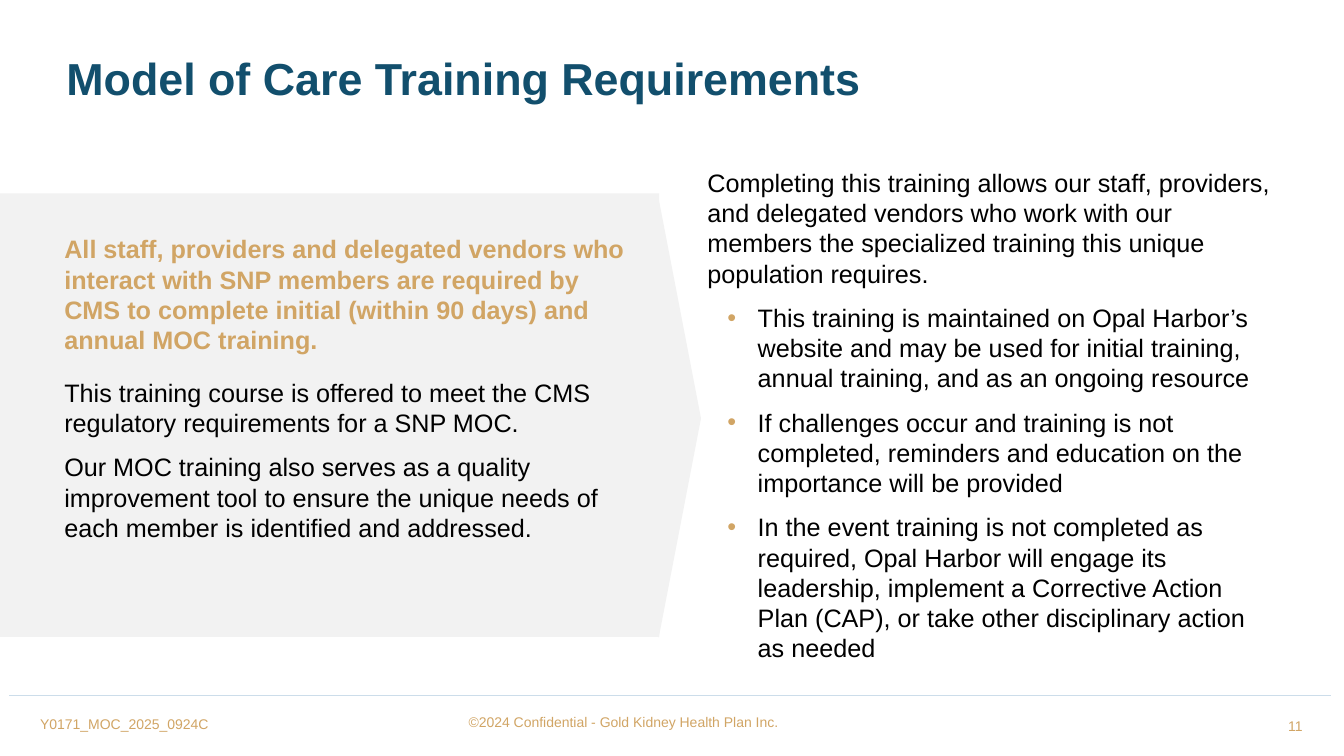
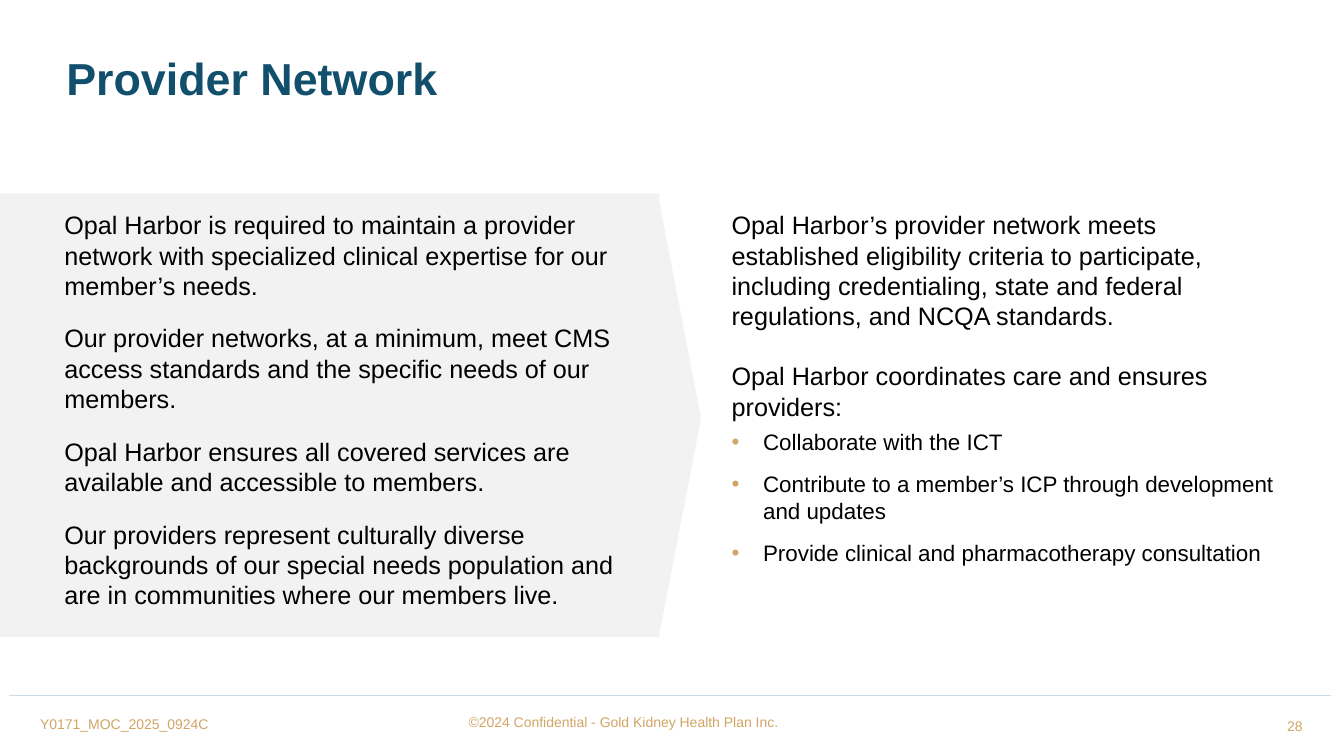
from lxml import etree
from pptx import Presentation
from pptx.dml.color import RGBColor
from pptx.enum.shapes import MSO_CONNECTOR, MSO_SHAPE
from pptx.enum.text import MSO_ANCHOR, PP_ALIGN
from pptx.oxml.ns import qn
from pptx.util import Pt

TEAL = RGBColor(0x12, 0x4F, 0x6D)
GOLD = RGBColor(0xD1, 0xA5, 0x65)
BLACK = RGBColor(0x00, 0x00, 0x00)
PANEL_GRAY = RGBColor(0xF2, 0xF2, 0xF2)
RULE_BLUE = RGBColor(0xCC, 0xDD, 0xEA)

RECTANGLE = MSO_SHAPE.RECTANGLE
TRIANGLE = MSO_SHAPE.ISOSCELES_TRIANGLE
STRAIGHT = MSO_CONNECTOR.STRAIGHT
TOP, MIDDLE = MSO_ANCHOR.TOP, MSO_ANCHOR.MIDDLE
LEFT, RIGHT = PP_ALIGN.LEFT, PP_ALIGN.RIGHT
FONT = "Arial"


def add_bullet(paragraph, margin, hanging):
    properties = paragraph._p.get_or_add_pPr()
    properties.set("marL", str(Pt(margin)))
    properties.set("indent", str(-Pt(hanging)))
    color = etree.SubElement(properties, qn("a:buClr"))
    etree.SubElement(color, qn("a:srgbClr"), val=str(GOLD))
    etree.SubElement(properties, qn("a:buFont"), typeface=FONT)
    etree.SubElement(properties, qn("a:buChar"), char="•")


def add_text(slide, box, paragraphs, anchor=TOP, **box_format):
    """Each paragraph is (text, format); its format overrides box_format."""
    frame = slide.shapes.add_textbox(*map(Pt, box)).text_frame
    frame.word_wrap = True
    frame.vertical_anchor = anchor
    for index, (text, own_format) in enumerate(paragraphs):
        style = {**box_format, **own_format}
        paragraph = frame.add_paragraph() if index else frame.paragraphs[0]
        paragraph.level = style.get("level", 0)
        if "bullet" in style:
            add_bullet(paragraph, *style["bullet"])
        paragraph.alignment = style.get("align", LEFT)
        paragraph.line_spacing = style.get("line_spacing", 1.0)
        paragraph.space_before = Pt(style.get("before", 0) if index else 0)
        paragraph.space_after = Pt(style.get("after", 0))
        run = paragraph.add_run()
        run.text = text
        run.font.name = FONT
        run.font.size = Pt(style.get("size", 18))
        run.font.bold = style.get("bold", False)
        run.font.color.rgb = style.get("color", BLACK)


# Paragraph formats
PLAIN = {}
SPACED = {"before": 10}
LOOSE = {"before": 10, "after": 6}
LEAD = {"after": 6, "bold": True, "color": GOLD}
BULLET = {"before": 10, "bullet": (36, 21.6)}
SMALL_BULLET = {"before": 5, "after": 6, "size": 16, "level": 1,
                "bullet": (22.5, 22.5)}
AFTER_GAP = {"before": 21.5}

# Slide content: title, page number, then box and paragraphs of each column
SLIDES = [
    ("Model of Care Training Requirements", "11", [
        ((38.9, 163.4, 419.8, 231.8), [
            ("All staff, providers and delegated vendors who interact with SNP "
             "members are required by CMS to complete initial (within 90 days) "
             "and annual MOC training.", LEAD),
            ("This training course is offered to meet the CMS regulatory "
             "requirements for a SNP MOC.", SPACED),
            ("Our MOC training also serves as a quality improvement tool to "
             "ensure the unique needs of each member is identified and "
             "addressed.", SPACED),
        ]),
        ((498.2, 115.9, 419.8, 386.6), [
            ("Completing this training allows our staff, providers, and "
             "delegated vendors who work with our members the specialized "
             "training this unique population requires.", PLAIN),
            ("This training is maintained on Opal Harbor’s website and may be "
             "used for initial training, annual training, and as an ongoing "
             "resource", BULLET),
            ("If challenges occur and training is not completed, reminders and "
             "education on the importance will be provided", BULLET),
            ("In the event training is not completed as required, Opal Harbor "
             "will engage its leadership, implement a Corrective Action Plan "
             "(CAP), or take other disciplinary action as needed", BULLET),
        ]),
    ]),
    ("Provider Network", "28", [
        ((38.9, 146.2, 419.8, 316.8), [
            ("Opal Harbor is required to maintain a provider network with "
             "specialized clinical expertise for our member’s needs.", LOOSE),
            ("Our provider networks, at a minimum, meet CMS access standards "
             "and the specific needs of our members.", LOOSE),
            ("Opal Harbor ensures all covered services are available and "
             "accessible to members.", LOOSE),
            ("Our providers represent culturally diverse backgrounds of our "
             "special needs population and are in communities where our "
             "members live.", LOOSE),
        ]),
        ((515.5, 146.2, 409, 316.8), [
            ("Opal Harbor’s provider network meets established eligibility "
             "criteria to participate, including credentialing, state and "
             "federal regulations, and NCQA standards.", PLAIN),
            ("Opal Harbor coordinates care and ensures providers:", AFTER_GAP),
            ("Collaborate with the ICT", SMALL_BULLET),
            ("Contribute to a member’s ICP through development and updates",
             SMALL_BULLET),
            ("Provide clinical and pharmacotherapy consultation", SMALL_BULLET),
        ]),
    ]),
]

# Gray panel with its pointed right side: preset, box, rotation
PANEL_PARTS = [
    (RECTANGLE, (0, 138.2, 470.9, 316.8), 0),
    (TRIANGLE, (329, 283.7, 313.2, 30.2), 90),
]

presentation = Presentation()
presentation.slide_width = Pt(960)
presentation.slide_height = Pt(540)
blank_layout = presentation.slide_layouts[6]

for title, page_number, columns in SLIDES:
    slide = presentation.slides.add_slide(blank_layout)

    # Footer
    rule = slide.shapes.add_connector(
        STRAIGHT, Pt(6.5), Pt(496.8), Pt(951), Pt(496.8))
    rule.line.color.rgb = RULE_BLUE
    rule.line.width = Pt(0.5)
    etree.SubElement(rule._element.spPr, qn("a:effectLst"))
    footer_items = [
        ("Y0171_MOC_2025_0924C", (21.6, 507.6, 144, 19.4), LEFT),
        ("©2024 Confidential - Gold Kidney Health Plan Inc.",
         (327.6, 506.2, 300.2, 19.4), LEFT),
        (page_number, (755.3, 504.7, 182.2, 27.4), RIGHT),
    ]
    for text, box, align in footer_items:
        add_text(slide, box, [(text, PLAIN)], anchor=MIDDLE,
                 size=10, color=GOLD, align=align)

    # Panel
    for preset, box, rotation in PANEL_PARTS:
        shape = slide.shapes.add_shape(preset, *map(Pt, box))
        shape.rotation = rotation
        shape.shadow.inherit = False
        shape.fill.solid()
        shape.fill.fore_color.rgb = PANEL_GRAY
        shape.line.fill.background()

    # Title and columns
    add_text(slide, (40.3, 37.4, 802, 48.2), [(title, PLAIN)],
             size=32, bold=True, color=TEAL, line_spacing=0.9)
    for box, paragraphs in columns:
        add_text(slide, box, paragraphs)

presentation.save("out.pptx")
